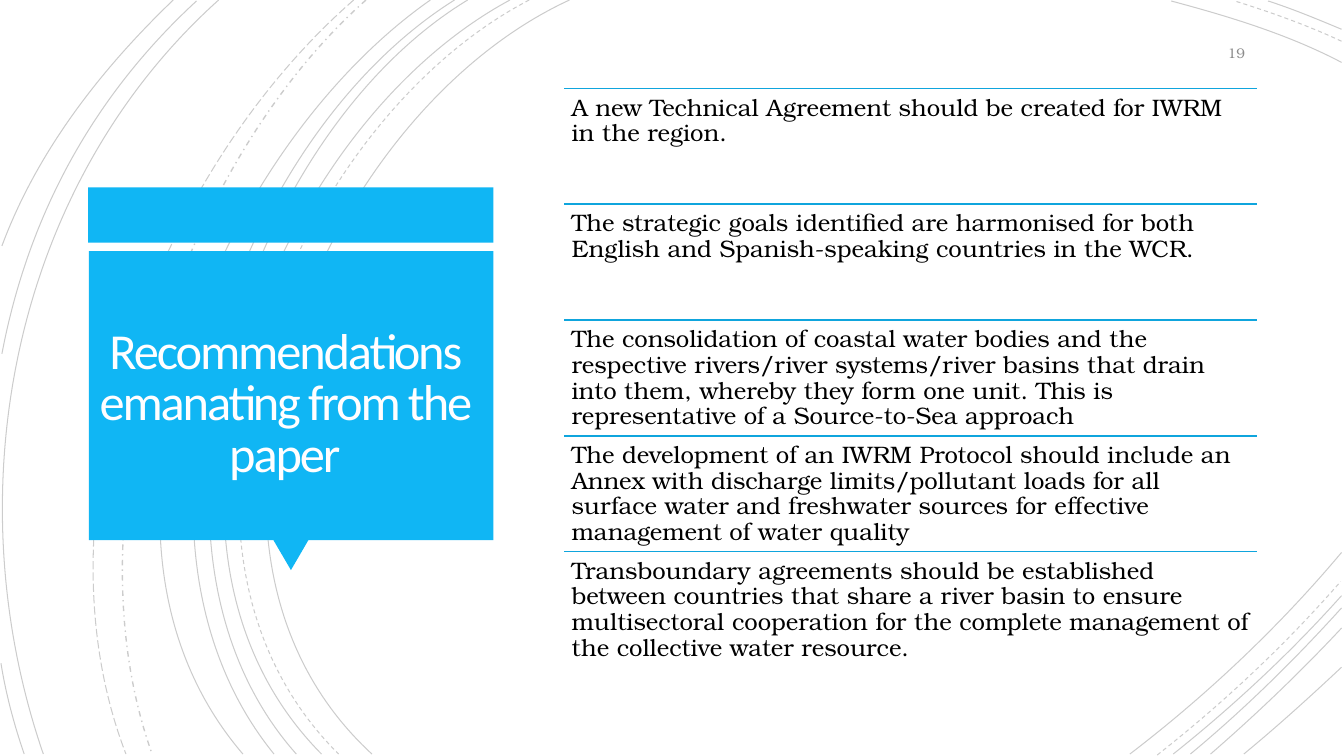
from dataclasses import dataclass

from lxml import etree
from pptx import Presentation
from pptx import util as u
from pptx.dml import color as c
from pptx.enum import dml, shapes, text
from pptx.oxml import ns

Pt = u.Pt


@dataclass(frozen=True)
class Theme:
    panel: str = "10B6F4"
    rule: str = "0FA5DD"
    arc: str = "000000"
    arc_opacity: int = 20
    title_color: str = "FFFEFF"
    body_color: str = "000000"
    number_color: str = "8C8C8C"
    title_font: str = "Calibri"
    body_font: str = "TeX Gyre Bonum"
    title_size: int = 36
    body_size: int = 17
    number_size: int = 10


THEME = Theme()

SOLID, DASH = dml.MSO_LINE.SOLID, dml.MSO_LINE.DASH
DASH_DOT, LONG_DASH = dml.MSO_LINE.DASH_DOT, dml.MSO_LINE.LONG_DASH

# Background arcs: dash style, line width, then start, two controls and end
ARCS = [
    (SOLID, 0.75, [(406.8, 0), (226.8, 82.8), (103, 388.8), (265.7, 538.6)]),
    (SOLID, 0.75, [(958.3, 44.6), (920.2, 24.5), (877, 11.5), (836.6, 0.7)]),
    (SOLID, 0.75, [(807.1, 538.6), (861.8, 496.8), (913.7, 447.8), (958.3, 394.6)]),
    (DASH, 0.75, [(378, 0), (205.2, 90), (88.6, 386.6), (241.9, 538.6)]),
    (DASH, 0.75, [(958.3, 29.5), (933.8, 18), (907.2, 8.6), (882, 0.7)]),
    (DASH, 0.75, [(826.6, 539.3), (873.4, 502.6), (918, 460.8), (957.6, 415.4)]),
    (SOLID, 0.75, [(364.3, 0), (194.4, 91.4), (79.2, 386.6), (229.7, 538.6)]),
    (SOLID, 0.75, [(958.3, 20.9), (941, 13.7), (923.8, 6.5), (905.8, 0.7)]),
    (SOLID, 0.75, [(838.1, 538.6), (880.6, 504.7), (921.6, 466.6), (958.3, 425.5)]),
    (SOLID, 0.75, [(334.1, 0), (175.7, 95.8), (79.2, 389.5), (211.7, 538.6)]),
    (SOLID, 0.75, [(850.3, 538.6), (888.5, 506.9), (924.5, 471.6), (958.3, 434.2)]),
    (SOLID, 0.75, [(324.7, 0), (166.3, 99.4), (69.8, 383.8), (195.8, 538.6)]),
    (SOLID, 0.75, [(864.7, 538.6), (897.1, 510.5), (928.8, 480.2), (958.3, 448.6)]),
    (SOLID, 0.75, [(307.4, 0), (156.2, 105.8), (38.2, 380.9), (173.5, 538.6)]),
    (SOLID, 0.75, [(888.5, 538.6), (912.2, 519.1), (935.3, 498.2), (958.3, 476.6)]),
    (DASH_DOT, 1, [(261.4, 0), (126.7, 119.5), (46.8, 366.5), (108.7, 538.6)]),
    (LONG_DASH, 0.75, [(252.7, 0), (113, 121.7), (20.9, 359.3), (90, 538.6)]),
    (SOLID, 0.75, [(156.2, 0), (7.9, 133.2), (-33.1, 352.8), (31, 538.6)]),
    (SOLID, 0.75, [(140.4, 0.7), (66.2, 69.1), (20.2, 154.1), (1.4, 252.7)]),
    (SOLID, 0.75, [(0.7, 473.8), (4.3, 496.1), (10.1, 517.7), (17.3, 538.6)]),
    (SOLID, 0.75, [(123.8, 0), (72, 49.7), (26.6, 108), (1.4, 175.7)]),
]

RECOMMENDATIONS = [
    "A new Technical Agreement should be created for IWRM in the region.",
    "The strategic goals identified are harmonised for both English and "
    "Spanish-speaking countries in the WCR.",
    "The consolidation of coastal water bodies and the respective rivers/river "
    "systems/river basins that drain into them, whereby they form one unit. "
    "This is representative of a Source-to-Sea approach",
    "The development of an IWRM Protocol should include an Annex with discharge "
    "limits/pollutant loads for all surface water and freshwater sources for "
    "effective management of water quality",
    "Transboundary agreements should be established between countries that share "
    "a river basin to ensure multisectoral cooperation for the complete "
    "management of the collective water resource.",
]
ROW_LEFT, ROW_TOP, ROW_WIDTH, ROW_HEIGHT = 403.2, 63.3, 494.6, 82.65


def rgb(value):
    return c.RGBColor.from_string(value)


def write_text(shape, content, *, font, size, color, align=text.PP_ALIGN.LEFT,
               anchor=text.MSO_ANCHOR.TOP, inset=5.1, line_spacing=1.0, tracking=0):
    frame = shape.text_frame
    frame.word_wrap = True
    frame.auto_size = text.MSO_AUTO_SIZE.NONE
    frame.vertical_anchor = anchor
    frame.margin_left = frame.margin_right = Pt(inset)
    frame.margin_top = frame.margin_bottom = Pt(inset)
    paragraph = frame.paragraphs[0]
    paragraph.alignment = align
    paragraph.line_spacing = line_spacing
    run = paragraph.add_run()
    run.text = content
    run.font.name = font
    run.font.size = Pt(size)
    run.font.color.rgb = rgb(color)
    if tracking:
        run.font._element.set("spc", str(round(tracking * 100)))


def add_text_box(slide, left, top, width, height, content, **style):
    box = slide.shapes.add_textbox(Pt(left), Pt(top), Pt(width), Pt(height))
    write_text(box, content, **style)


def add_arc(slide, dash, width, controls):
    start, *others = [(Pt(x), Pt(y)) for x, y in controls]
    builder = slide.shapes.build_freeform(*start)
    builder.add_line_segments(others, close=False)
    arc = builder.convert_to_shape()
    # Join the three segments into one cubic curve
    segments = arc._element.findall(".//" + ns.qn("a:lnTo"))
    outline = segments[0].getparent()
    curve = etree.SubElement(outline, ns.qn("a:cubicBezTo"))
    for segment in segments:
        curve.append(segment[0])
        outline.remove(segment)
    arc.shadow.inherit = False
    arc.fill.background()
    arc.line.color.rgb = rgb(THEME.arc)
    arc.line.width = Pt(width)
    arc.line.dash_style = dash
    # Line transparency
    line_color = arc.line._ln.find(".//" + ns.qn("a:srgbClr"))
    alpha = etree.SubElement(line_color, ns.qn("a:alpha"))
    alpha.set("val", str(THEME.arc_opacity * 1000))


def add_panel(slide, kind, left, top, width, height, rotation=0):
    panel = slide.shapes.add_shape(kind, Pt(left), Pt(top), Pt(width), Pt(height))
    panel.rotation = rotation
    panel.shadow.inherit = False
    panel.fill.solid()
    panel.fill.fore_color.rgb = rgb(THEME.panel)
    panel.line.fill.background()


def add_rule(slide, left, top, width):
    rule = slide.shapes.add_connector(shapes.MSO_CONNECTOR.STRAIGHT,
                                      Pt(left), Pt(top), Pt(left + width), Pt(top))
    rule.line.color.rgb = rgb(THEME.rule)
    rule.line.width = Pt(1.25)
    etree.SubElement(rule._element.spPr, ns.qn("a:effectLst"))


def place_title(slide, content):
    title = slide.shapes.title
    title.left, title.top, title.width, title.height = Pt(31.5), Pt(187.2), Pt(344), Pt(204.5)
    write_text(title, content, font=THEME.title_font, size=THEME.title_size,
               color=THEME.title_color, align=text.PP_ALIGN.CENTER,
               anchor=text.MSO_ANCHOR.MIDDLE, inset=18, line_spacing=0.85, tracking=-1.5)
    # Bring the title in front of the panels
    slide.shapes._spTree.append(title._element)


def main():
    presentation = Presentation()
    presentation.slide_width, presentation.slide_height = Pt(960), Pt(540)
    slide = presentation.slides.add_slide(presentation.slide_layouts[5])

    # Background
    for dash, width, controls in ARCS:
        add_arc(slide, dash, width, controls)

    # Title callout
    rectangle = shapes.MSO_SHAPE.RECTANGLE
    add_panel(slide, rectangle, 63, 133.8, 289.4, 39.6)
    add_panel(slide, shapes.MSO_SHAPE.ISOSCELES_TRIANGLE, 195.2, 385.6, 25.2, 21.6, rotation=180)
    add_panel(slide, rectangle, 63.5, 179.4, 288.9, 206.4)
    place_title(slide, "Recommendations emanating from the paper")

    # Recommendations
    for row, recommendation in enumerate(RECOMMENDATIONS):
        top = ROW_TOP + row * ROW_HEIGHT
        add_rule(slide, ROW_LEFT, top, ROW_WIDTH)
        add_text_box(slide, ROW_LEFT, top, ROW_WIDTH, ROW_HEIGHT, recommendation,
                     font=THEME.body_font, size=THEME.body_size,
                     color=THEME.body_color, line_spacing=0.9)

    # Slide number
    add_text_box(slide, 824.4, 25.2, 72, 25.2, "19", font=THEME.body_font,
                 size=THEME.number_size, color=THEME.number_color, inset=7.2,
                 align=text.PP_ALIGN.RIGHT, anchor=text.MSO_ANCHOR.MIDDLE)

    presentation.save("out.pptx")


if __name__ == "__main__":
    main()
